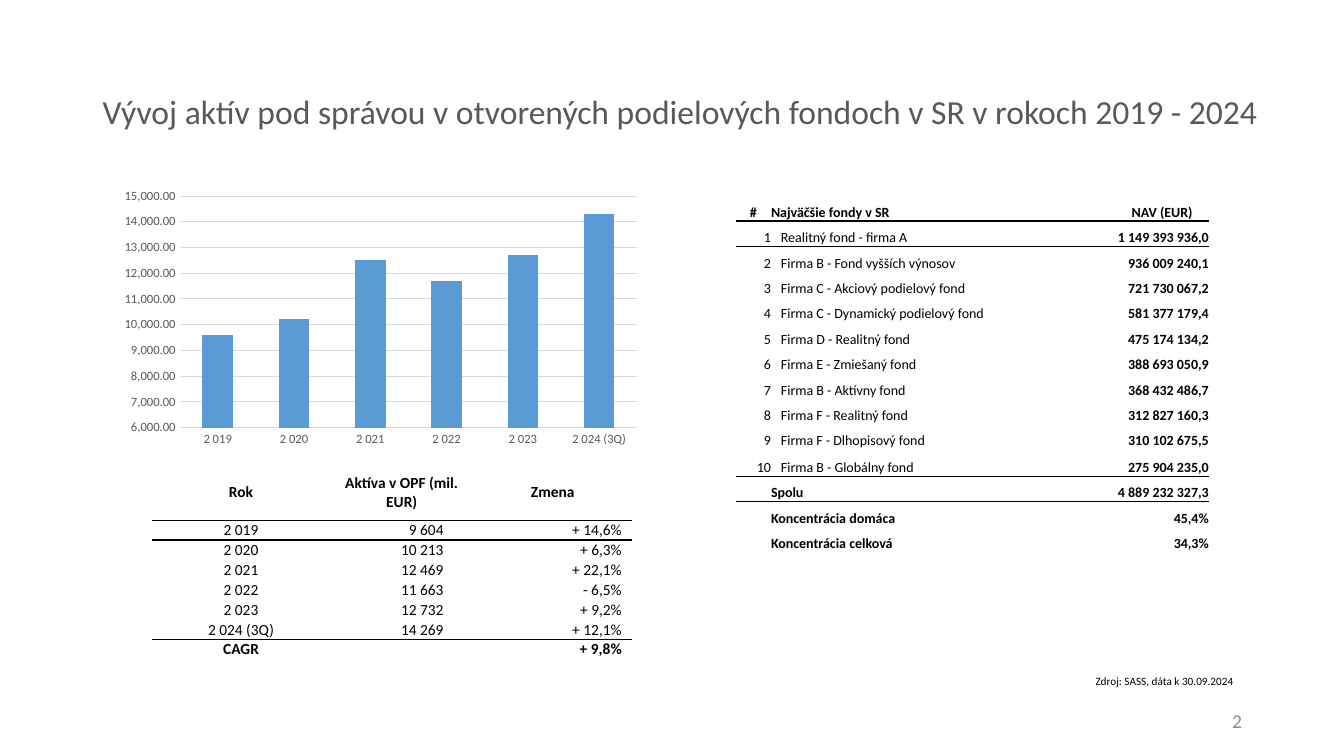
from dataclasses import dataclass
from lxml.etree import SubElement
from pptx import Presentation
from pptx.chart.data import CategoryChartData
from pptx.dml.color import RGBColor
from pptx.enum.chart import XL_CHART_TYPE, XL_TICK_MARK
from pptx.enum.text import MSO_ANCHOR, PP_ALIGN
from pptx.oxml.ns import qn
from pptx.util import Cm, Pt

HUES = {"ink": "000000", "title": "595959", "page": "8C8C8C",
        "grid": "D9D9D9", "bar": "5B9BD5"}
FACE = "Calibri"
PLAIN = "{2D5ABB26-0587-4C30-8999-92F81FD0307C}"  # table style without grid
LEFT, MID, RIGHT = PP_ALIGN.LEFT, PP_ALIGN.CENTER, PP_ALIGN.RIGHT


@dataclass
class Label:
    text: str
    box: tuple[float, float, float, float]
    size: int
    hue: str
    align: PP_ALIGN = LEFT
    anchor: MSO_ANCHOR = MSO_ANCHOR.MIDDLE
    lead: float = 1.0


@dataclass
class Entry:
    text: str = ""
    align: PP_ALIGN = LEFT
    bold: bool = False
    left: float = 0
    right: float = 0
    indent: float = 0
    anchor: MSO_ANCHOR = MSO_ANCHOR.BOTTOM


@dataclass
class Grid:
    spot: tuple[float, float]
    cols: list[float]
    rows: list[float]
    size: int
    cells: list[list[Entry]]
    rules: list[int]  # rows with a line below


def color(hue: str) -> RGBColor:
    return RGBColor.from_string(HUES[hue])


def style(font, size: int, hue: str, bold: bool = False) -> None:
    font.name, font.size, font.bold = FACE, Pt(size), bold
    font.color.rgb = color(hue)


def write(para, text: str, size: int, hue: str, bold: bool = False) -> None:
    run = para.add_run()
    run.text = text
    style(run.font, size, hue, bold)


def add_label(slide, item: Label) -> None:
    frame = slide.shapes.add_textbox(*map(Cm, item.box)).text_frame
    frame.word_wrap = True
    frame.vertical_anchor = item.anchor
    para = frame.paragraphs[0]
    para.alignment, para.line_spacing = item.align, item.lead
    write(para, item.text, item.size, item.hue)


def add_rule(cell, side: str) -> None:
    line = SubElement(cell._tc.get_or_add_tcPr(), qn(f"a:{side}"), w=str(Pt(1)))
    fill = SubElement(line, qn("a:solidFill"))
    SubElement(fill, qn("a:srgbClr"), val=HUES["ink"])


def fill_cell(cell, item: Entry, size: int) -> None:
    cell.margin_left, cell.margin_right = Cm(item.left), Cm(item.right)
    cell.margin_top = cell.margin_bottom = 0
    cell.vertical_anchor = item.anchor
    para = cell.text_frame.paragraphs[0]
    para.alignment = item.align
    if item.indent:
        para._p.get_or_add_pPr().set("marL", str(Cm(item.indent)))
    if item.text:
        write(para, item.text, size, "ink", item.bold)
    else:
        SubElement(para._p, qn("a:endParaRPr"), sz=str(size * 100))


def add_grid(slide, grid: Grid):
    table = slide.shapes.add_table(
        len(grid.rows), len(grid.cols), *map(Cm, grid.spot),
        Cm(sum(grid.cols)), Cm(sum(grid.rows))).table
    table.first_row = table.horz_banding = False
    table._tbl.tblPr.find(qn("a:tableStyleId")).text = PLAIN
    for col, width in zip(table.columns, grid.cols):
        col.width = Cm(width)
    for y, (row, high) in enumerate(zip(table.rows, grid.rows)):
        row.height = Cm(high)
        for cell, item in zip(row.cells, grid.cells[y]):
            fill_cell(cell, item, grid.size)
            if y - 1 in grid.rules:
                add_rule(cell, "lnT")
            if y in grid.rules:
                add_rule(cell, "lnB")
            cell.fill.background()
    return table


def add_bars(slide, names: list[str], values: list[int]) -> None:
    data = CategoryChartData()
    data.categories = names
    data.add_series("Series 1", values)
    chart = slide.shapes.add_chart(
        XL_CHART_TYPE.COLUMN_CLUSTERED,
        *map(Cm, (2.87, 4.62, 13.46, 6.76)), data).chart
    chart.has_legend = chart.has_title = False
    style(chart.font, 10, "ink")
    plot = chart.plots[0]
    plot.gap_width, plot.vary_by_categories = 150, False
    fill = plot.series[0].format.fill
    fill.solid()
    fill.fore_color.rgb = color("bar")
    for axis in (chart.category_axis, chart.value_axis):
        axis.major_tick_mark = axis.minor_tick_mark = XL_TICK_MARK.NONE
        axis.format.line.fill.background()
        style(axis.tick_labels.font, 9, "title")
    axis = chart.value_axis
    axis.minimum_scale, axis.maximum_scale, axis.major_unit = 6000, 15000, 1000
    axis.tick_labels.number_format = "#,##0.00"
    axis.tick_labels.number_format_is_linked = False
    axis.has_major_gridlines = True
    line = axis.major_gridlines.format.line
    line.color.rgb, line.width = color("grid"), Pt(0.75)


LABELS = [
    Label("Vývoj aktív pod správou v otvorených podielových fondoch v SR "
          "v rokoch 2019 - 2024", (2.34, 1.02, 30.33, 3.68), 24, "title", lead=0.9),
    Label("2", (23.93, 17.65, 7.62, 1.02), 14, "page", RIGHT),
    Label("Zdroj: SASS, dáta k 30.09.2024", (27.36, 16.87, 4.19, 0.61), 8, "ink",
          anchor=MSO_ANCHOR.TOP),
]
YEARS = [("2 019", "9 604", "+ 14,6%"), ("2 020", "10 213", "+ 6,3%"),
         ("2 021", "12 469", "+ 22,1%"), ("2 022", "11 663", "- 6,5%"),
         ("2 023", "12 732", "+ 9,2%"), ("2 024 (3Q)", "14 269", "+ 12,1%")]
FUNDS = [("Realitný fond - firma A", "1 149 393 936,0"),
         ("Firma B - Fond vyšších výnosov", "936 009 240,1"),
         ("Firma C - Akciový podielový fond", "721 730 067,2"),
         ("Firma C - Dynamický podielový fond", "581 377 179,4"),
         ("Firma D - Realitný fond", "475 174 134,2"),
         ("Firma E - Zmiešaný fond", "388 693 050,9"),
         ("Firma B - Aktívny fond", "368 432 486,7"),
         ("Firma F - Realitný fond", "312 827 160,3"),
         ("Firma F - Dlhopisový fond", "310 102 675,5"),
         ("Firma B - Globálny fond", "275 904 235,0")]
SUMS = [("Spolu", "4 889 232 327,3"), ("Koncentrácia domáca", "45,4%"),
        ("Koncentrácia celková", "34,3%")]


def year_row(name: str, total: str, change: str, bold: bool = False) -> list[Entry]:
    return [Entry(name, MID, bold), Entry(total, RIGHT, bold, right=0.76),
            Entry(change, RIGHT, bold, right=0.25)]


def main() -> None:
    deck = Presentation()
    deck.slide_width, deck.slide_height = Cm(33.87), Cm(19.05)
    slide = deck.slides.add_slide(deck.slide_layouts[6])
    for item in LABELS:
        add_label(slide, item)
    add_bars(slide, [year[0] for year in YEARS],
             [9600, 10200, 12500, 11700, 12700, 14300])

    # Assets by year
    heads = [Entry(text, MID, True, anchor=MSO_ANCHOR.MIDDLE)
             for text in ("Rok", "Aktíva v OPF (mil. EUR)", "Zmena")]
    body = [year_row(*year) for year in YEARS]
    add_grid(slide, Grid((3.84, 11.71), [4.47, 3.63, 3.98], [1.4] + [0.5] * 7, 11,
                         [heads, *body, year_row("CAGR", "", "+ 9,8%", True)], [0, 6]))

    # Largest funds
    heads = [Entry("#", MID, True), Entry("Najväčšie fondy v SR", bold=True),
             Entry(), Entry("NAV (EUR)", MID, True, indent=1.27)]
    body = [[Entry(str(rank), RIGHT), Entry(name, left=0.25), Entry(),
             Entry(value, RIGHT, True)] for rank, (name, value) in enumerate(FUNDS, 1)]
    sums = [[Entry(), Entry(name, bold=True), Entry(), Entry(value, RIGHT, True)]
            for name, value in SUMS]
    rows = [0.67 if y in (0, 10) else 0.64 for y in range(14)]
    table = add_grid(slide, Grid((18.54, 4.9), [0.89, 4.09, 3.32, 3.62], rows, 10,
                                 [heads, *body, *sums], [0, 10]))
    for y in (2, 3, 4):  # long names take two columns
        table.cell(y, 1).merge(table.cell(y, 2))
    deck.save("out.pptx")


if __name__ == "__main__":
    main()
